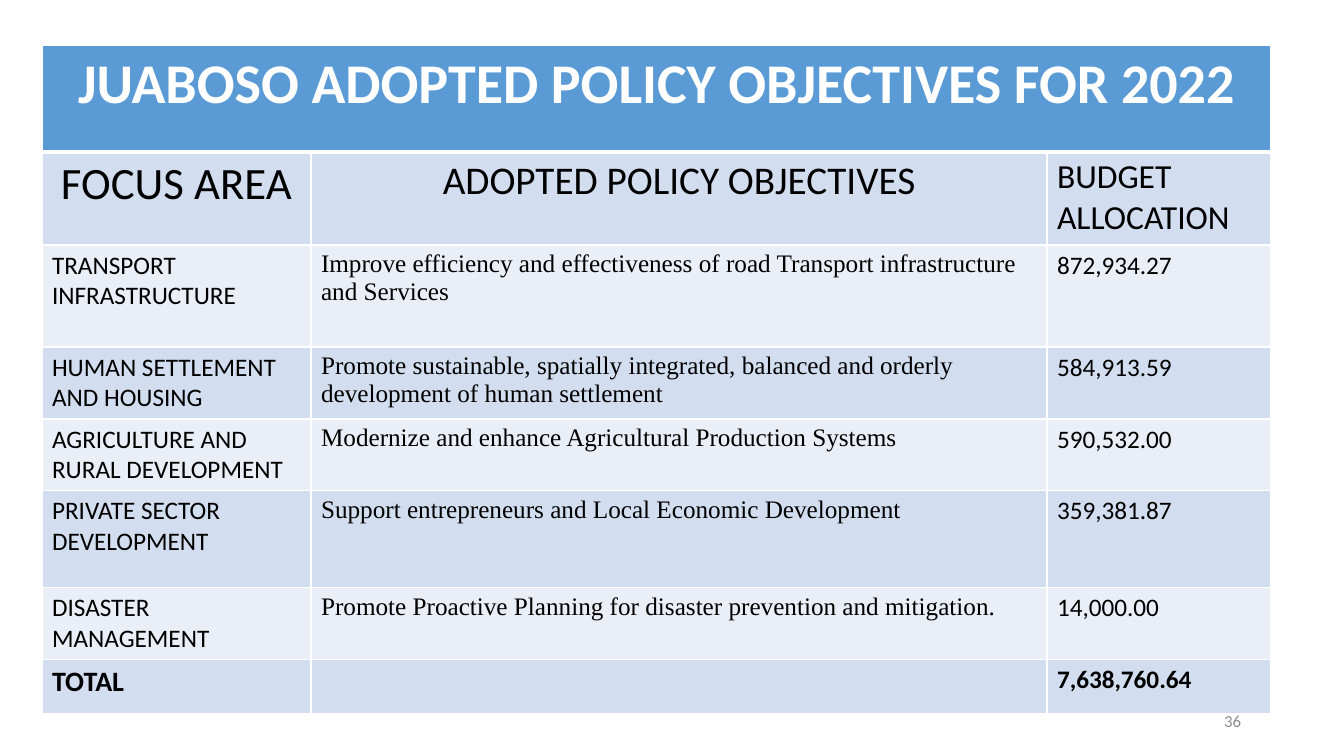
from lxml.etree import SubElement
from pptx import Presentation
from pptx.dml.color import RGBColor
from pptx.enum.text import MSO_ANCHOR, PP_ALIGN
from pptx.oxml.ns import qn
from pptx.util import Emu, Pt

EMU_PER_PX = 914400 / 100.8
SANS, SERIF = "Calibri", "Times New Roman"
BLACK, WHITE, GREY = "000000", "FFFFFF", "8C8C8C"
TITLE_BLUE, DARK_BAND, LIGHT_BAND = "5B9BD5", "D2DEEF", "EAEFF7"
COLUMN_WIDTHS = [269, 736, 224]
ROW_HEIGHTS = [107, 93, 102, 72, 71, 97, 72, 54]
TITLE = "JUABOSO ADOPTED POLICY OBJECTIVES FOR 2022"
HEADINGS = [
    ("FOCUS AREA", 32, PP_ALIGN.CENTER),
    ("ADOPTED POLICY OBJECTIVES", 28, PP_ALIGN.CENTER),
    ("BUDGET ALLOCATION", 24, PP_ALIGN.LEFT),
]
POLICIES = [
    ("TRANSPORT INFRASTRUCTURE",
     "Improve efficiency and effectiveness of road Transport infrastructure and Services",
     "872,934.27"),
    ("HUMAN SETTLEMENT AND HOUSING",
     "Promote sustainable, spatially integrated, balanced and orderly development of human settlement",
     "584,913.59"),
    ("AGRICULTURE AND RURAL DEVELOPMENT",
     "Modernize and enhance Agricultural Production Systems",
     "590,532.00"),
    ("PRIVATE SECTOR DEVELOPMENT",
     "Support entrepreneurs and Local Economic Development",
     "359,381.87"),
    ("DISASTER MANAGEMENT",
     "Promote Proactive Planning for disaster prevention and mitigation.",
     "14,000.00"),
]


def px(length):
    """Convert pixels to EMU."""
    return Emu(round(length * EMU_PER_PX))


def color(value):
    """Convert a hex string to a colour."""
    return RGBColor.from_string(value)


def write(frame, text, size=18, font=SANS, ink=BLACK, bold=False, align=PP_ALIGN.LEFT):
    """Write one formatted paragraph into a text frame."""
    paragraph = frame.paragraphs[0]
    paragraph.alignment = align
    run = paragraph.add_run()
    run.text = text
    run.font.size = Pt(size)
    run.font.name = font
    run.font.bold = bold
    run.font.color.rgb = color(ink)


def set_borders(cell, bottom_width=1):
    """Draw white borders around a cell."""
    properties = cell._tc.get_or_add_tcPr()
    widths = {"a:lnL": 1, "a:lnR": 1, "a:lnT": 1, "a:lnB": bottom_width}
    for position, (side, width) in enumerate(widths.items()):
        line = SubElement(properties, qn(side), w=str(Pt(width)))
        fill = SubElement(line, qn("a:solidFill"))
        SubElement(fill, qn("a:srgbClr"), val=WHITE)
        properties.insert(position, line)


def style_row(row, fill, bottom_width=1):
    """Give every cell of a row its fill and borders."""
    for cell in row.cells:
        cell.fill.solid()
        cell.fill.fore_color.rgb = color(fill)
        set_borders(cell, bottom_width)


def add_policy_table(slide):
    """Add the table of focus areas, objectives and budgets."""
    table = slide.shapes.add_table(
        len(ROW_HEIGHTS), len(COLUMN_WIDTHS), px(42), px(45),
        px(sum(COLUMN_WIDTHS)), px(sum(ROW_HEIGHTS))).table
    for column, width in zip(table.columns, COLUMN_WIDTHS):
        column.width = px(width)
    for index, (row, height) in enumerate(zip(table.rows, ROW_HEIGHTS)):
        row.height = px(height)
        if index == 0:
            style_row(row, TITLE_BLUE, bottom_width=3)
        else:
            style_row(row, DARK_BAND if index % 2 else LIGHT_BAND)

    title = table.cell(0, 0)
    title.merge(table.cell(0, 2))
    write(title.text_frame, TITLE, size=40, ink=WHITE, bold=True, align=PP_ALIGN.CENTER)
    for column, (heading, size, align) in enumerate(HEADINGS):
        write(table.cell(1, column).text_frame, heading, size=size, align=align)
    for row, policy in enumerate(POLICIES, start=2):
        for column, (text, font) in enumerate(zip(policy, (SANS, SERIF, SANS))):
            write(table.cell(row, column).text_frame, text, font=font)
    total_row = len(ROW_HEIGHTS) - 1
    write(table.cell(total_row, 0).text_frame, "TOTAL", size=20, bold=True)
    write(table.cell(total_row, 2).text_frame, "7,638,760.64", bold=True)


def add_page_number(slide, number):
    """Add the page number at the lower right."""
    frame = slide.shapes.add_textbox(px(949), px(701), px(302), px(40)).text_frame
    frame.word_wrap = True
    frame.vertical_anchor = MSO_ANCHOR.MIDDLE
    write(frame, number, size=12, ink=GREY, align=PP_ALIGN.RIGHT)


def main():
    """Build and save the slide."""
    presentation = Presentation()
    presentation.slide_width = px(1344)
    presentation.slide_height = px(756)
    slide = presentation.slides.add_slide(presentation.slide_layouts[6])
    add_policy_table(slide)
    add_page_number(slide, "36")
    presentation.save("out.pptx")


if __name__ == "__main__":
    main()
